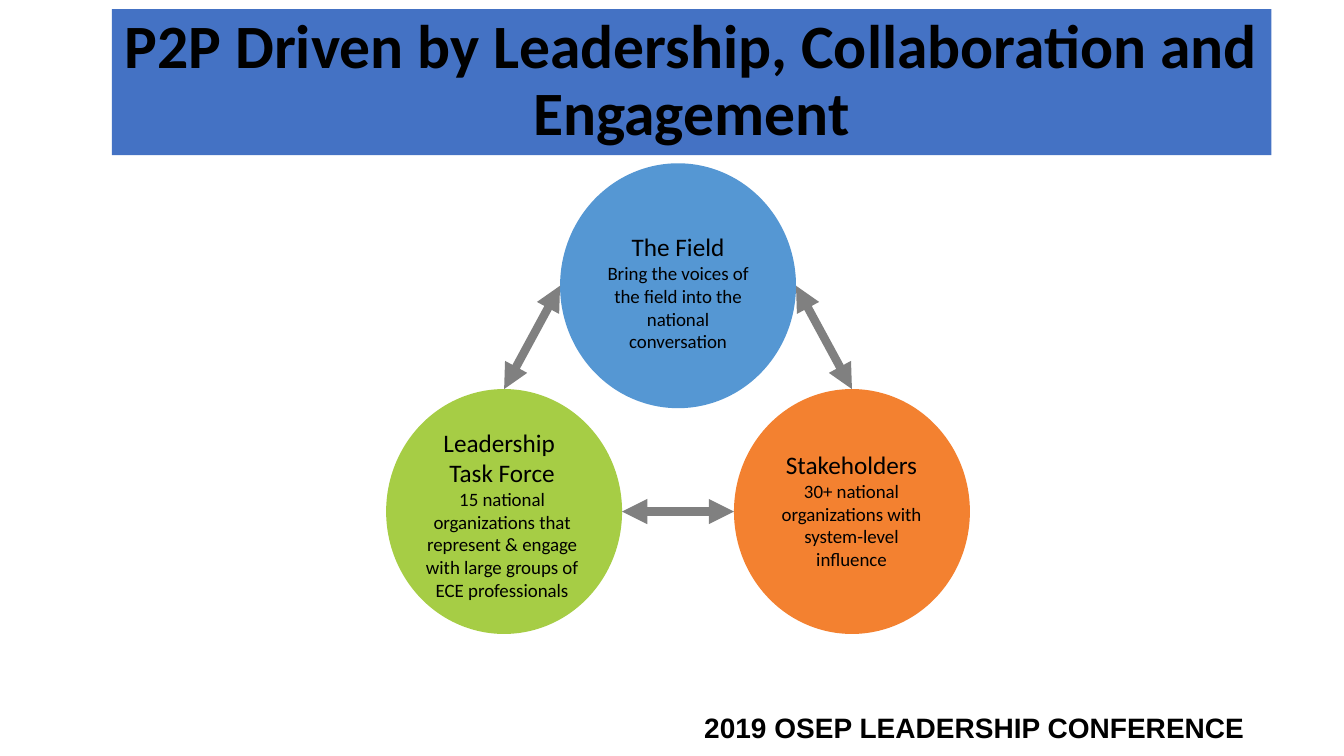
from dataclasses import dataclass

from lxml.etree import SubElement
from pptx import Presentation
from pptx.dml.color import RGBColor
from pptx.enum.shapes import MSO_CONNECTOR, MSO_SHAPE
from pptx.enum.text import MSO_ANCHOR, MSO_AUTO_SIZE, PP_ALIGN
from pptx.oxml.ns import qn
from pptx.util import Inches, Pt


@dataclass(frozen=True)
class Theme:
    text: str = "000000"
    banner: str = "4472C4"
    field: str = "5597D3"
    stakeholders: str = "F38130"
    task_force: str = "A6CD45"
    arrow: str = "808080"
    body_font: str = "Calibri"
    footer_font: str = "Arial"
    title_size: float = 44
    footer_size: float = 20
    heading_size: float = 18
    detail_size: float = 13.5
    arrow_width: float = 6


class SlideBuilder:
    def __init__(self, slide, theme):
        self.slide = slide
        self.theme = theme

    def format_paragraph(self, p, size, font, bold=False, align=PP_ALIGN.CENTER):
        p.alignment = align
        for r in p.runs:
            r.font.size = Pt(size)
            r.font.name = font
            r.font.bold = bold
            r.font.color.rgb = RGBColor.from_string(self.theme.text)

    def title(self, text, left, top, width, height):
        sp = self.slide.shapes.title
        sp.left, sp.top = Inches(left), Inches(top)
        sp.width, sp.height = Inches(width), Inches(height)
        sp.fill.solid()
        sp.fill.fore_color.rgb = RGBColor.from_string(self.theme.banner)
        tf = sp.text_frame
        tf.text = text
        tf.word_wrap = True
        tf.auto_size = MSO_AUTO_SIZE.NONE
        tf.vertical_anchor = MSO_ANCHOR.MIDDLE
        p = tf.paragraphs[0]
        p.line_spacing = 0.9
        self.format_paragraph(p, self.theme.title_size, self.theme.body_font, bold=True)

    def circle(self, color, left, top, width, height):
        sp = self.slide.shapes.add_shape(
            MSO_SHAPE.OVAL, Inches(left), Inches(top), Inches(width), Inches(height))
        sp.shadow.inherit = False
        sp.fill.solid()
        sp.fill.fore_color.rgb = RGBColor.from_string(color)
        sp.line.fill.background()

    def text_box(self, left, top, width, height):
        sp = self.slide.shapes.add_textbox(
            Inches(left), Inches(top), Inches(width), Inches(height))
        tf = sp.text_frame
        tf.word_wrap = True
        return tf

    def label(self, heading, detail, left, top, width, height):
        tf = self.text_box(left, top, width, height)
        p = tf.paragraphs[0]
        p.text = heading
        self.format_paragraph(p, self.theme.heading_size, self.theme.body_font)
        p = tf.add_paragraph()
        p.text = detail
        self.format_paragraph(p, self.theme.detail_size, self.theme.body_font)

    def footer(self, text, left, top, width, height):
        tf = self.text_box(left, top, width, height)
        tf.text = text
        self.format_paragraph(tf.paragraphs[0], self.theme.footer_size,
                              self.theme.footer_font, bold=True, align=PP_ALIGN.RIGHT)

    def double_arrow(self, start, end):
        cxn = self.slide.shapes.add_connector(
            MSO_CONNECTOR.STRAIGHT, *map(Inches, start + end))
        cxn.line.width = Pt(self.theme.arrow_width)
        cxn.line.color.rgb = RGBColor.from_string(self.theme.arrow)
        ln = cxn.line._get_or_add_ln()
        for tag in ("a:headEnd", "a:tailEnd"):
            SubElement(ln, qn(tag)).set("type", "triangle")
        SubElement(cxn._element.spPr, qn("a:effectLst"))


def main():
    prs = Presentation()
    prs.slide_width, prs.slide_height = Inches(13.33), Inches(7.5)
    theme = Theme()
    s = SlideBuilder(prs.slides.add_slide(prs.slide_layouts[5]), theme)

    s.title("P2P Driven by Leadership, Collaboration and Engagement", 1.11, 0.09, 11.5, 1.45)
    s.footer("2019 OSEP LEADERSHIP CONFERENCE", 6.67, 7, 5.77, 0.44)

    width, height = 2.34, 2.43
    left_x, right_x = 3.83, 7.28
    middle_x = (left_x + right_x) / 2
    upper_y, lower_y = 1.62, 3.86
    circles = [
        (theme.field, middle_x, upper_y, "The Field",
         "Bring the voices of the field into the national conversation",
         (5.88, 2.25, 1.69, 1.31)),
        (theme.stakeholders, right_x, lower_y, "Stakeholders",
         "30+ national organizations with system-level influence",
         (7.6, 4.41, 1.69, 1.54)),
        (theme.task_force, left_x, lower_y, "Leadership \vTask Force",
         "15 national organizations that represent & engage with large groups "
         "of ECE professionals",
         (4.08, 4.19, 1.8, 1.84)),
    ]
    for color, x, y, heading, detail, label_box in circles:
        s.circle(color, x, y, width, height)
        s.label(heading, detail, *label_box)

    upper_mid, lower_mid = upper_y + height / 2, lower_y + height / 2
    s.double_arrow((left_x + width / 2, lower_y), (middle_x, upper_mid))
    s.double_arrow((left_x + width, lower_mid), (right_x, lower_mid))
    s.double_arrow((middle_x + width, upper_mid), (right_x + width / 2, lower_y))

    prs.save("out.pptx")


if __name__ == "__main__":
    main()
